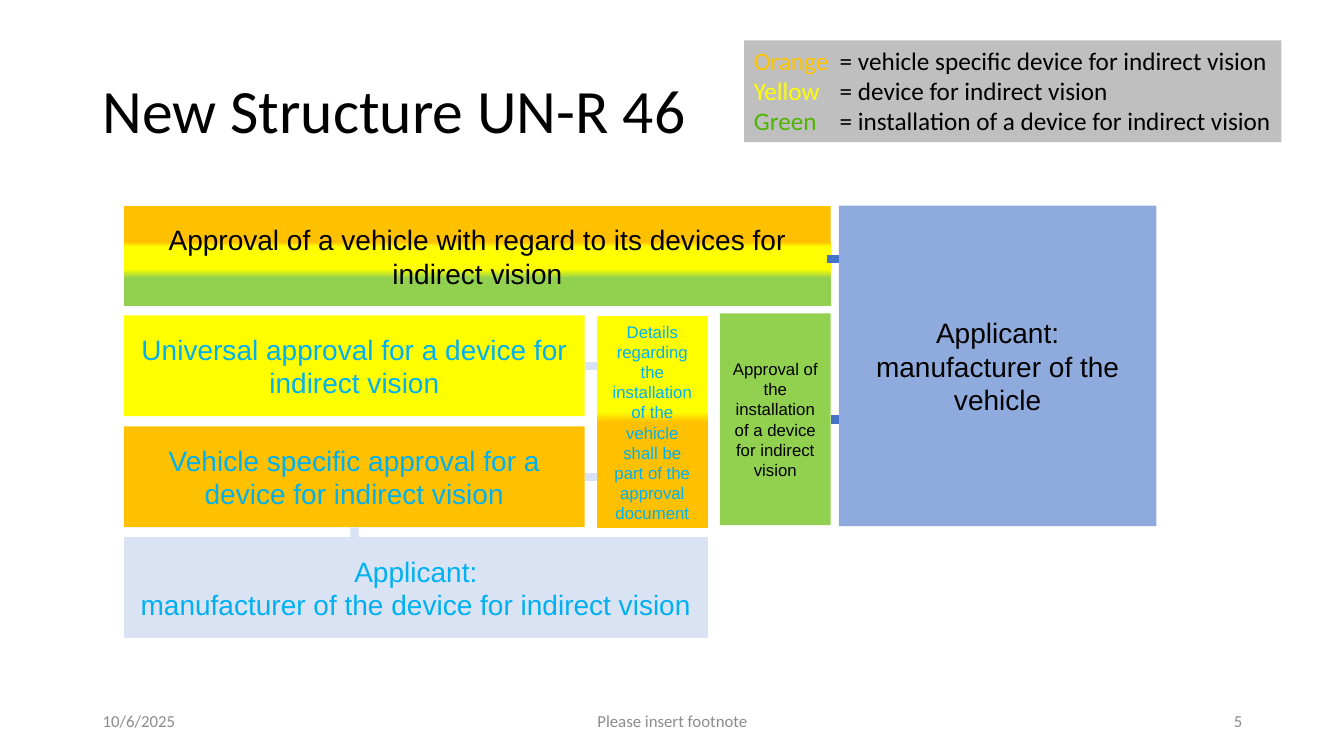
from lxml import etree
from pptx import Presentation
from pptx.dml.color import RGBColor
from pptx.enum.shapes import MSO_CONNECTOR, MSO_SHAPE
from pptx.enum.text import MSO_ANCHOR, PP_ALIGN
from pptx.oxml.ns import qn
from pptx.util import Inches, Pt


def rgb(value):
    return RGBColor.from_string(value)


def write(frame, lines, size, font, color, align, anchor=MSO_ANCHOR.MIDDLE):
    frame.word_wrap = True
    frame.vertical_anchor = anchor
    for i, line in enumerate(lines):
        paragraph = frame.paragraphs[0] if i == 0 else frame.add_paragraph()
        paragraph.text = line
        paragraph.alignment = align
        paragraph.font.size = Pt(size)
        paragraph.font.name = font
        paragraph.font.color.rgb = rgb(color)


ORANGE, YELLOW, GREEN = "FFC000", "FFFF00", "92D050"
BLACK, CYAN, PALE, BLUE, GREY = "000000", "00B0F0", "DAE3F3", "4472C4", "8C8C8C"

prs = Presentation()
prs.slide_width, prs.slide_height = Inches(13.33), Inches(7.5)
slide = prs.slides.add_slide(prs.slide_layouts[6])

captions = [
    ("New Structure UN-R 46", 0.92, 0.4, 11.5, 1.45, 44, BLACK, PP_ALIGN.LEFT),
    ("10/6/2025", 0.92, 6.95, 3, 0.4, 12, GREY, PP_ALIGN.LEFT),
    ("Please insert footnote", 4.42, 6.95, 4.5, 0.4, 12, GREY, PP_ALIGN.CENTER),
    ("5", 9.42, 6.95, 3, 0.4, 12, GREY, PP_ALIGN.RIGHT),
]
for text, x, y, w, h, size, color, align in captions:
    caption = slide.shapes.add_textbox(Inches(x), Inches(y), Inches(w), Inches(h))
    write(caption.text_frame, [text], size, "Calibri", color, align)
    caption.text_frame.paragraphs[0].line_spacing = 0.9 if size == 44 else 1.0

vehicle_stops = [(0, ORANGE), (36, ORANGE), (41, YELLOW), (63, YELLOW), (72, GREEN)]
details_stops = [(0, YELLOW), (45, YELLOW), (50, ORANGE), (89, ORANGE)]
blocks = [
    ("vehicle", 1.23, 2.04, 7.01, 1, vehicle_stops, 20, BLACK,
     ["Approval of a vehicle with regard to its devices for indirect vision"]),
    ("universal", 1.23, 3.13, 4.57, 1, YELLOW, 20, CYAN,
     ["Universal approval for a device for indirect vision"]),
    ("specific", 1.23, 4.23, 4.57, 1, ORANGE, 20, CYAN,
     ["Vehicle specific approval for a device for indirect vision"]),
    ("installation", 7.14, 3.11, 1.1, 2.1, GREEN, 12, BLACK,
     ["Approval of the installation of a device for indirect vision"]),
    ("vehicle maker", 8.32, 2.04, 3.15, 3.18, "8FAADC", 20, BLACK,
     ["Applicant:", "manufacturer of the vehicle"]),
    ("device maker", 1.23, 5.33, 5.79, 1, PALE, 20, CYAN,
     ["Applicant:", "manufacturer of the device for indirect vision"]),
    ("details", 5.92, 3.14, 1.1, 2.1, details_stops, 12, CYAN,
     ["Details regarding the installation of the vehicle shall be part of the "
      "approval document"]),
    ("legend", 7.38, 0.4, 5.33, 1.01, "BFBFBF", 18, BLACK, []),
]
placed = {}
for name, x, y, w, h, fill, size, color, lines in blocks:
    block = slide.shapes.add_shape(
        MSO_SHAPE.RECTANGLE, Inches(x), Inches(y), Inches(w), Inches(h))
    block.shadow.inherit = False
    block.line.fill.background()
    if isinstance(fill, str):
        block.fill.solid()
        block.fill.fore_color.rgb = rgb(fill)
    else:
        block.fill.gradient()
        block.fill.gradient_angle = 270
        stops = block._element.spPr.find(".//" + qn("a:gsLst"))
        for stop in list(stops):
            stops.remove(stop)
        for percent, shade in fill:
            stop = etree.SubElement(stops, qn("a:gs"), pos=str(percent * 1000))
            etree.SubElement(stop, qn("a:srgbClr"), val=shade)
    write(block.text_frame, lines, size, "Arial", color, PP_ALIGN.CENTER)
    placed[name] = block

legend = placed["legend"].text_frame
meanings = [
    ("Orange", "FFC600", "vehicle specific device for indirect vision"),
    ("Yellow", "FFFF00", "device for indirect vision"),
    ("Green", "50B400", "installation of a device for indirect vision"),
]
write(legend, [""] * len(meanings), 18, "Calibri", BLACK, PP_ALIGN.LEFT, MSO_ANCHOR.TOP)
for paragraph, (word, color, meaning) in zip(legend.paragraphs, meanings):
    tabs = etree.Element(qn("a:tabLst"))
    etree.SubElement(tabs, qn("a:tab"), pos=str(Inches(0.85)), algn="l")
    paragraph._p.get_or_add_pPr().find(qn("a:defRPr")).addprevious(tabs)
    for text, shade in ((word, color), (f"\t= {meaning}", BLACK)):
        run = paragraph.add_run()
        run.text = text
        run.font.color.rgb = rgb(shade)

links = [
    (5.92, 3.63, 5.8, 3.63, PALE, "universal", 3),
    (5.92, 4.73, 5.8, 4.73, PALE, "specific", 3),
    (8.32, 4.16, 8.24, 4.16, BLUE, "installation", 3),
    (8.32, 2.57, 8.2, 2.57, BLUE, None, None),
    (3.52, 5.33, 3.52, 5.23, PALE, "specific", 2),
]
for x1, y1, x2, y2, color, target, side in links:
    link = slide.shapes.add_connector(
        MSO_CONNECTOR.STRAIGHT, Inches(x1), Inches(y1), Inches(x2), Inches(y2))
    link.line.color.rgb = rgb(color)
    link.line.width = Pt(6)
    etree.SubElement(link._element.spPr, qn("a:effectLst"))
    if target:
        link.end_connect(placed[target], side)

prs.save("out.pptx")
